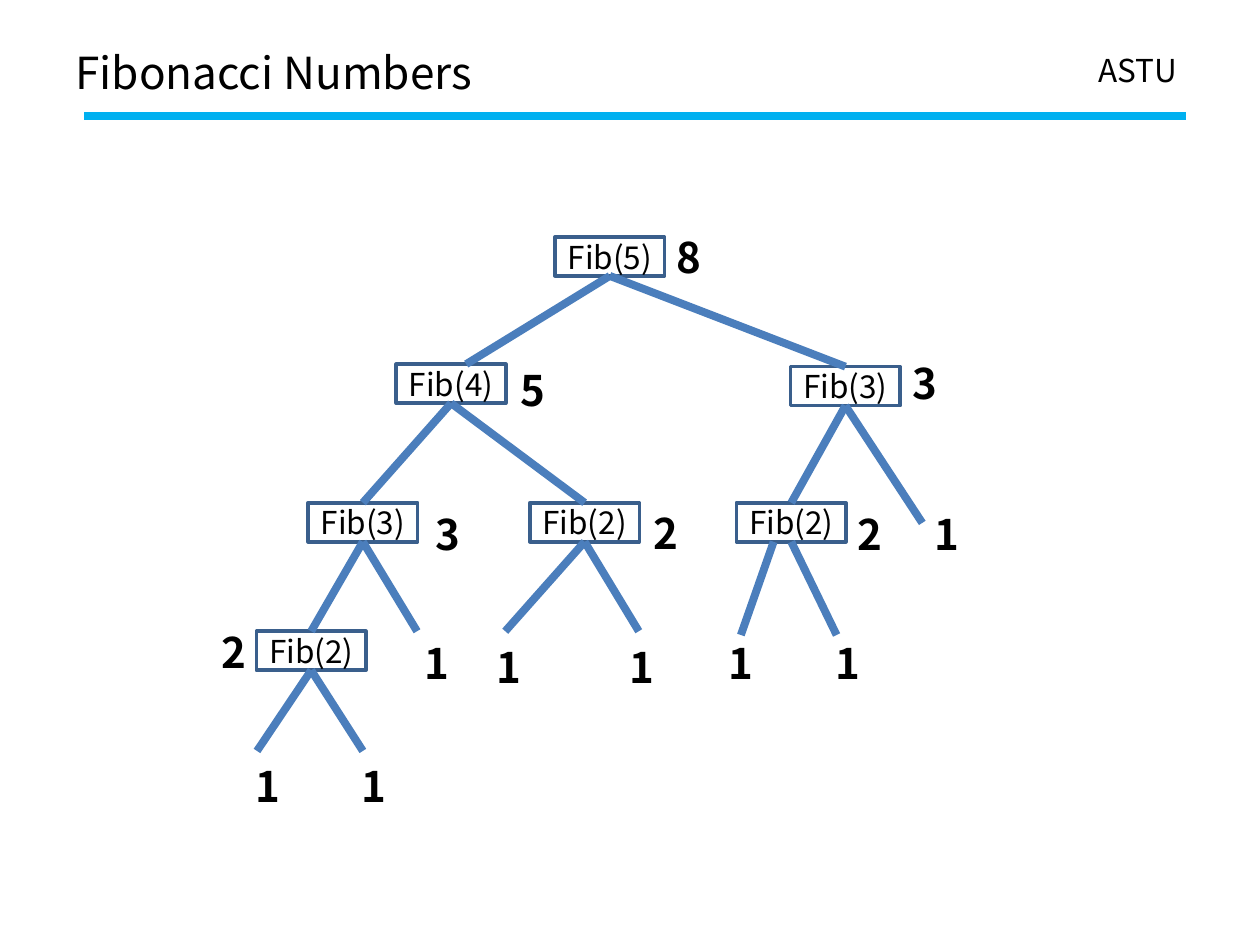
from lxml import etree
from pptx import Presentation
from pptx.dml.color import RGBColor
from pptx.enum.shapes import MSO_CONNECTOR, MSO_SHAPE
from pptx.enum.text import MSO_ANCHOR, PP_ALIGN
from pptx.oxml.ns import qn
from pptx.util import Inches, Pt

STRAIGHT = MSO_CONNECTOR.STRAIGHT
RECTANGLE = MSO_SHAPE.RECTANGLE
TOP, MIDDLE = MSO_ANCHOR.TOP, MSO_ANCHOR.MIDDLE
LEFT, CENTER = PP_ALIGN.LEFT, PP_ALIGN.CENTER

FONT = "Noto Sans CJK KR"
COLORS = {"text": "000000", "rule": "00B0F0", "border": "3A5F8C", "branch": "4B7EBC"}

# The slide is a grid of 100 columns by 75 rows
COLUMNS, ROWS = 100, 75
CELL = Inches(0.1)
NODE_WIDTH, NODE_HEIGHT = 8.7, 3.1
VALUE_WIDTH, VALUE_HEIGHT = 3.8, 5

# Calls: name -> (label, centre column, top row)
CALLS = {
    "root": ("Fib(5)", 48.4, 18.8),
    "left": ("Fib(4)", 35.8, 28.9),
    "right": ("Fib(3)", 67.1, 29.1),
    "left-left": ("Fib(3)", 28.8, 39.9),
    "left-right": ("Fib(2)", 46.4, 39.9),
    "deepest": ("Fib(2)", 24.7, 50.1),
    "right-left": ("Fib(2)", 62.8, 39.9),
}

# Branches: caller, shift of the start, end column, end row
BRANCHES = [
    ("root", 0, 37, 28.9), ("root", 0, 67.1, 29.1),
    ("left", 0, 28.8, 39.9), ("left", 0, 46.4, 39.9),
    ("right", 0, 62.8, 39.9), ("right", 0, 73.2, 41.5),
    ("left-left", 0, 24.7, 50.1), ("left-left", 0, 33.1, 50.1),
    ("deepest", 0, 20.4, 59.6), ("deepest", 0, 28.8, 59.6),
    ("left-right", 0, 40.1, 50.1), ("left-right", 0, 50.7, 50.1),
    ("right-left", -1.4, 58.8, 50.4), ("right-left", 0, 66.4, 50.4),
]

# Returned values: number, left column, top row
VALUES = [
    ("8", 52.7, 17.9), ("5", 40.3, 28.4), ("3", 71.4, 27.9),
    ("3", 33.6, 39.9), ("2", 50.9, 39.8), ("2", 67.1, 39.9),
    ("2", 16.6, 49.2), ("1", 73.2, 39.9), ("1", 65.3, 50.1),
    ("1", 56.8, 50.1), ("1", 49, 50.4), ("1", 38.4, 50.4),
    ("1", 32.7, 50.1), ("1", 27.7, 59.9), ("1", 19.3, 59.9),
]


def grid(*cells):
    return [round(cell * CELL) for cell in cells]


def color(name):
    return RGBColor.from_string(COLORS[name])


def write(shape, text, size, bold=False, anchor=TOP, align=LEFT, wrap=False):
    frame = shape.text_frame
    frame.word_wrap = wrap
    frame.vertical_anchor = anchor
    paragraph = frame.paragraphs[0]
    paragraph.text = text
    paragraph.alignment = align
    paragraph.font.name = FONT
    paragraph.font.size = Pt(size)
    paragraph.font.bold = bold
    paragraph.font.color.rgb = color("text")


def add_text(slide, box, text, size, **style):
    write(slide.shapes.add_textbox(*grid(*box)), text, size, **style)


def add_line(slide, start, end, color_name):
    line = slide.shapes.add_connector(STRAIGHT, *grid(*start, *end))
    line.line.color.rgb = color(color_name)
    line.line.width = Pt(4.5)
    etree.SubElement(line._element.spPr, qn("a:effectLst"))


def add_call(slide, label, center, top):
    box = grid(center - NODE_WIDTH / 2, top, NODE_WIDTH, NODE_HEIGHT)
    shape = slide.shapes.add_shape(RECTANGLE, *box)
    shape.shadow.inherit = False
    shape.fill.background()
    shape.line.color.rgb = color("border")
    shape.line.width = Pt(2)
    write(shape, label, 18, anchor=MIDDLE, align=CENTER)


def add_branch(slide, caller, shift, end_column, end_row):
    label, center, top = CALLS[caller]
    start = (center + shift, top + NODE_HEIGHT)
    add_line(slide, start, (end_column, end_row), "branch")


def main():
    presentation = Presentation()
    presentation.slide_width, presentation.slide_height = grid(COLUMNS, ROWS)
    slide = presentation.slides.add_slide(presentation.slide_layouts[6])

    # Header
    add_line(slide, (6.7, 9.2), (94.1, 9.2), "rule")
    add_text(slide, (86.2, 3.6, 8.7, 4), "ASTU", 18)
    add_text(slide, (5, 3, 90, 5.4), "Fibonacci Numbers", 25.2,
             anchor=MIDDLE, wrap=True)

    # Call tree
    for call in CALLS.values():
        add_call(slide, *call)
    for branch in BRANCHES:
        add_branch(slide, *branch)
    for number, left, top in VALUES:
        add_text(slide, (left, top, VALUE_WIDTH, VALUE_HEIGHT), number, 24, bold=True)

    presentation.save("out.pptx")


if __name__ == "__main__":
    main()
